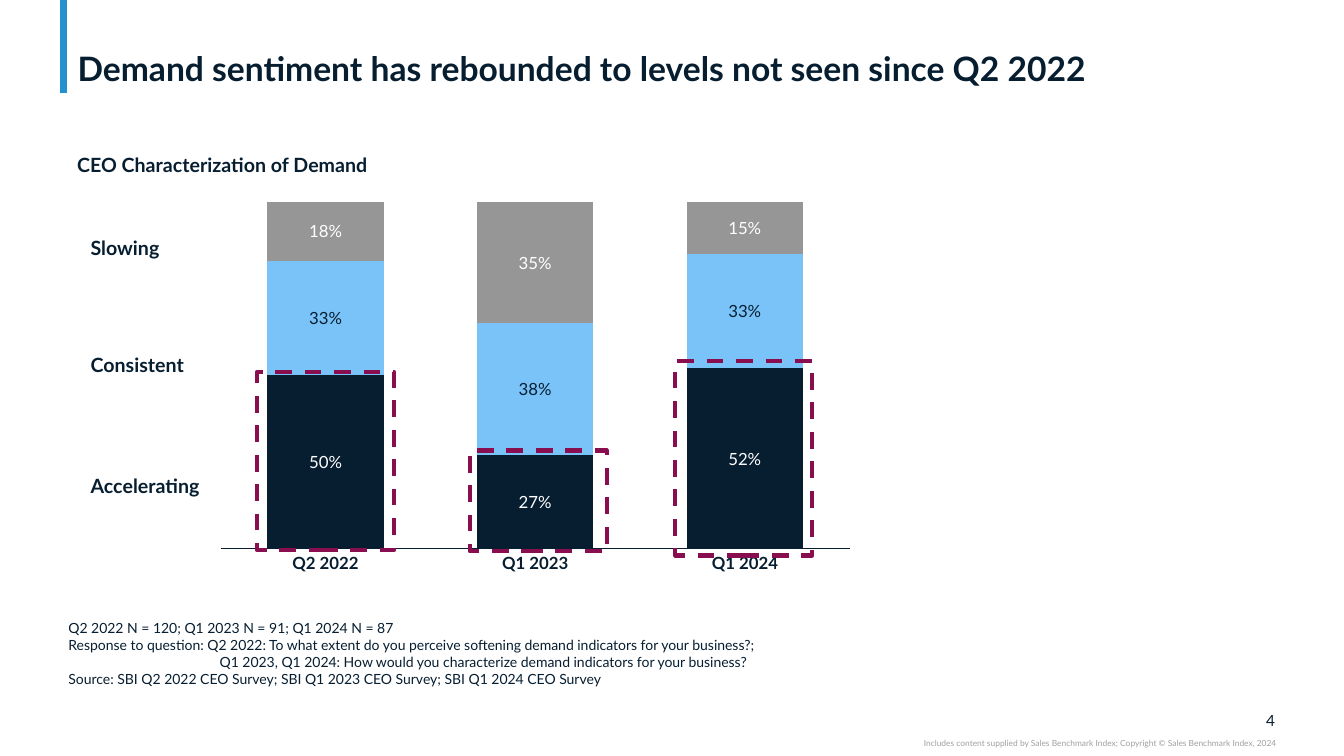
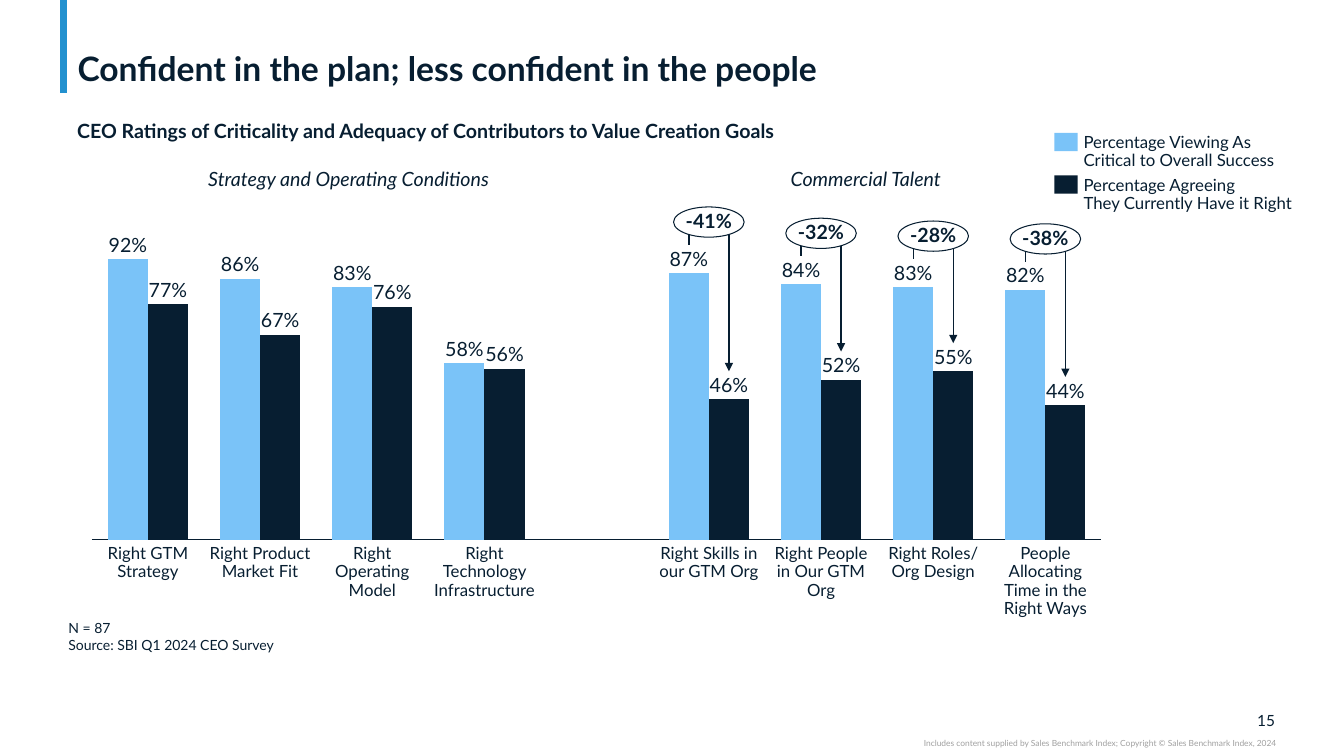
from lxml.etree import SubElement
from pptx import Presentation
from pptx.chart.data import CategoryChartData
from pptx.dml.color import RGBColor
from pptx.enum.chart import XL_CHART_TYPE, XL_TICK_LABEL_POSITION, XL_TICK_MARK
from pptx.enum.dml import MSO_LINE
from pptx.enum.shapes import MSO_CONNECTOR, MSO_SHAPE
from pptx.enum.text import MSO_ANCHOR, MSO_AUTO_SIZE, PP_ALIGN
from pptx.oxml.ns import qn
from pptx.shapes.connector import Connector
from pptx.util import Pt

FONT = "Lato"
HEX = {"navy": "071E31", "sky": "7AC3F8", "gray": "969696", "accent": "2391CF",
       "berry": "880E4F", "credit": "A0A0A0", "white": "FFFFFF"}
COLORS = {name: RGBColor.from_string(value) for name, value in HEX.items()}
LEFT, CENTER, RIGHT = PP_ALIGN.LEFT, PP_ALIGN.CENTER, PP_ALIGN.RIGHT


def add_text(page, left, top, width, height, text, size, color="navy", bold=False,
             italic=False, align=LEFT, anchor=MSO_ANCHOR.TOP, spacing=0.9,
             padded=False, oval=False):
    """Add a text box, or an outlined oval, with one paragraph per line of text."""
    place = Pt(left), Pt(top), Pt(width), Pt(height)
    if oval:
        box = page.shapes.add_shape(MSO_SHAPE.OVAL, *place)
        box.shadow.inherit = False
        box.fill.solid()
        box.fill.fore_color.rgb = COLORS["white"]
        box.line.color.rgb = COLORS["navy"]
        box.line.width = Pt(0.75)
    else:
        box = page.shapes.add_textbox(*place)
    frame = box.text_frame
    frame.word_wrap = not oval
    frame.vertical_anchor = anchor
    frame.margin_left = frame.margin_right = Pt(7.2 if padded else 0)
    frame.margin_top = frame.margin_bottom = Pt(3.6 if padded else 0)
    for index, line in enumerate(text.split("\n")):
        para = frame.add_paragraph() if index else frame.paragraphs[0]
        if line.startswith("\t"):
            tabs = SubElement(para._p.get_or_add_pPr(), qn("a:tabLst"))
            SubElement(tabs, qn("a:tab"), pos=str(Pt(108)), algn="l")
        para.alignment = align
        para.line_spacing = spacing
        span = para.add_run()
        span.text = line
        span.font.name = FONT
        span.font.size = Pt(size)
        span.font.bold = bold
        span.font.italic = italic
        span.font.color.rgb = COLORS[color]


def add_columns(page, kind, place, plot_box, series_list, overlap):
    """Add a bare column chart; series_list holds (values, fill colour) pairs."""
    data = CategoryChartData()
    data.categories = [str(n + 1) for n in range(len(series_list[0][0]))]
    for number, (values, _) in enumerate(series_list, 1):
        data.add_series(f"Series {number}", values)
    chart = page.shapes.add_chart(kind, *map(Pt, place), data).chart
    chart.has_legend = chart.has_title = False
    chart.font.name = FONT
    chart.font.size = Pt(10)
    chart.font.color.rgb = COLORS["navy"]
    axis = chart.category_axis
    axis.tick_label_position = XL_TICK_LABEL_POSITION.NONE
    axis.major_tick_mark = axis.minor_tick_mark = XL_TICK_MARK.NONE
    axis.format.line.color.rgb = COLORS["navy"]
    axis.format.line.width = Pt(0.75)
    scale = chart.value_axis
    scale.visible = scale.has_major_gridlines = False
    scale.minimum_scale, scale.maximum_scale = 0, 100
    plot = chart.plots[0]
    plot.vary_by_categories = False
    plot.gap_width, plot.overlap = 80, overlap
    for series, (_, color) in zip(plot.series, series_list):
        series.format.fill.solid()
        series.format.fill.fore_color.rgb = COLORS[color]
    # Fixed inner plot area
    area = chart._chartSpace.chart.plotArea
    for old in area.findall(qn("c:layout")):
        area.remove(old)
    layout = area.makeelement(qn("c:layout"), {})
    area.insert(0, layout)
    manual = SubElement(layout, qn("c:manualLayout"))
    settings = [("layoutTarget", "inner"), ("xMode", "edge"), ("yMode", "edge"),
                *zip("xywh", plot_box)]
    for tag, value in settings:
        SubElement(manual, qn(f"c:{tag}"), val=str(value))
    return plot


deck = Presentation()
deck.slide_width, deck.slide_height = Pt(960), Pt(540)

# Shared frame: accent line, title, subtitle, notes, page number, copyright
pages = []
for number, title, subtitle, subtitle_top, notes in [
    (4, "Demand sentiment has rebounded to levels not seen since Q2 2022",
     "CEO Characterization of Demand", 105.8,
     "Q2 2022 N = 120; Q1 2023 N = 91; Q1 2024 N = 87\n"
     "Response to question: Q2 2022: To what extent do you perceive softening demand "
     "indicators for your business?;\n"
     "\tQ1 2023, Q1 2024: How would you characterize demand indicators for your business?\n"
     "Source: SBI Q2 2022 CEO Survey; SBI Q1 2023 CEO Survey; SBI Q1 2024 CEO Survey"),
    (15, "Confident in the plan; less confident in the people",
     "CEO Ratings of Criticality and Adequacy of Contributors to Value Creation Goals", 81.4,
     "N = 87\nSource: SBI Q1 2024 CEO Survey"),
]:
    page = deck.slides.add_slide(deck.slide_layouts[5])
    pages.append(page)
    accent = page.shapes.add_connector(MSO_CONNECTOR.STRAIGHT, Pt(45.4), 0, Pt(45.4), Pt(66.2))
    accent.line.color.rgb = COLORS["accent"]
    accent.line.width = Pt(5)
    heading = page.shapes.title
    heading.left, heading.top, heading.width, heading.height = map(Pt, (48.2, 2.9, 863.3, 60.5))
    frame = heading.text_frame
    frame.auto_size = MSO_AUTO_SIZE.NONE
    frame.word_wrap = True
    frame.vertical_anchor = MSO_ANCHOR.BOTTOM
    frame.margin_top = frame.margin_bottom = 0
    para = frame.paragraphs[0]
    para.alignment = LEFT
    para.line_spacing = 0.9
    span = para.add_run()
    span.text = title
    span.font.name = FONT
    span.font.size = Pt(24)
    span.font.bold = True
    span.font.color.rgb = COLORS["navy"]
    add_text(page, 48, subtitle_top, 562, 24.5, subtitle, 14, bold=True, spacing=1, padded=True)
    add_text(page, 41.8, 439.2, 726, 67, notes, 10, spacing=1, padded=True)
    add_text(page, 886.8, 507.6, 24, 13.6, str(number), 11, align=RIGHT,
             anchor=MSO_ANCHOR.MIDDLE, spacing=1)
    add_text(page, 540, 527, 371.5, 7.2, "Includes content supplied by Sales Benchmark Index; "
             "Copyright © Sales Benchmark Index, 2024", 6, "credit", align=RIGHT, spacing=1)
demand, talent = pages

# Demand: stacked columns with value labels
plot = add_columns(demand, XL_CHART_TYPE.COLUMN_STACKED, (151.2, 123.1, 462.2, 290.2),
                   (0.014, 0.072, 0.972, 0.855),
                   [((50, 27, 52), "navy"), ((33, 38, 33), "sky"), ((18, 35, 15), "gray")], 100)
for series, color in zip(plot.series, ("white", "navy", "white")):
    labels = series.data_labels
    labels.show_value = True
    labels.number_format = '0"%"'
    labels.number_format_is_linked = False
    labels.font.name = FONT
    labels.font.size = Pt(12)
    labels.font.color.rgb = COLORS[color]

# Demand: quarter names, answer names and dashed highlights
for index, quarter in enumerate(("Q2 2022", "Q1 2023", "Q1 2024")):
    add_text(demand, 205.9 + 149.8 * index, 396.7, 53.3, 13, quarter, 12, bold=True, align=CENTER)
for top, answer in ((164.9, "Slowing"), (248.4, "Consistent"), (334.8, "Accelerating")):
    add_text(demand, 57.6, top, 114.5, 24.5, answer, 14, bold=True, spacing=1, padded=True)
for left, top, height in ((183.6, 265.7, 127.4), (335.5, 321.8, 72), (482.4, 257.8, 139)):
    highlight = demand.shapes.add_shape(MSO_SHAPE.RECTANGLE, Pt(left), Pt(top), Pt(97.9), Pt(height))
    highlight.shadow.inherit = False
    highlight.fill.background()
    highlight.line.color.rgb = COLORS["berry"]
    highlight.line.width = Pt(3)
    highlight.line.dash_style = MSO_LINE.DASH

# Talent: paired columns; the empty slot separates the two groups
critical = (100, 93, 90, 63, None, 95, 91, 90, 89)
adequate = (84, 73, 83, 61, None, 50, 57, 60, 48)
add_columns(talent, XL_CHART_TYPE.COLUMN_CLUSTERED, (59, 178.6, 734.4, 213.8),
            (0.009, 0.03, 0.982, 0.939), [(critical, "sky"), (adequate, "navy")], 0)

# Talent: slot, name, name width, shown percentages
FIRST_CENTER, PITCH, HALF_PAIR = 105.7, 80.13, 14.3
PLOT_TOP, PLOT_HEIGHT = 185, 200.8
for slot, name, width, high, low in [
    (0, "Right GTM Strategy", 59, 92, 77),
    (1, "Right Product Market Fit", 75, 86, 67),
    (2, "Right Operating Model", 58, 83, 76),
    (3, "Right Technology Infrastructure", 74, 58, 56),
    (5, "Right Skills in our GTM Org", 74, 87, 46),
    (6, "Right People in Our GTM Org", 70.5, 84, 52),
    (7, "Right Roles/ Org Design", 67, 83, 55),
    (8, "People Allocating Time in the Right Ways", 62, 82, 44),
]:
    center = FIRST_CENTER + PITCH * slot
    add_text(talent, center - width / 2, 389.5, width, 52, name, 12, align=CENTER)
    bars = [(center - HALF_PAIR, critical[slot], high), (center + HALF_PAIR, adequate[slot], low)]
    label_tops = []
    for middle, value, shown in bars:
        top = PLOT_TOP + PLOT_HEIGHT * (1 - value / 100) - 17
        label_tops.append(top)
        add_text(talent, middle - 16, top, 32, 15.1, f"{shown}%", 14, align=CENTER,
                 anchor=MSO_ANCHOR.BOTTOM)
    if slot < 5:
        continue
    # Drop from the critical to the adequate share
    oval_top = label_tops[0] - 30.2
    for (middle, _, _), label_top in zip(bars, label_tops):
        drop = talent.shapes.add_connector(MSO_CONNECTOR.STRAIGHT, Pt(middle), Pt(oval_top + 10.8),
                                           Pt(middle), Pt(label_top - 3.2))
        drop.line.color.rgb = COLORS["navy"]
        drop.line.width = Pt(1)
    SubElement(drop.line._get_or_add_ln(), qn("a:tailEnd"), type="triangle")
    add_text(talent, center - 25.2, oval_top, 50.4, 21.6, f"-{high - low}%", 14, bold=True,
             align=CENTER, anchor=MSO_ANCHOR.MIDDLE, oval=True)

# Talent: legend and group names
for top, color, text in [
    (95, "sky", "Percentage Viewing As\nCritical to Overall Success"),
    (125.3, "navy", "Percentage Agreeing\nThey Currently Have it Right"),
]:
    swatch = talent.shapes.add_shape(MSO_SHAPE.RECTANGLE, Pt(753.1), Pt(top), Pt(16.6), Pt(13))
    swatch.shadow.inherit = False
    swatch.fill.solid()
    swatch.fill.fore_color.rgb = COLORS[color]
    swatch.line.fill.background()
    add_text(talent, 774, top + 0.7, 165, 26, text, 12, anchor=MSO_ANCHOR.MIDDLE)
for left, group in ((119.5, "Strategy and Operating Conditions"), (488.9, "Commercial Talent")):
    add_text(talent, left, 115.9, 259.2, 24.5, group, 14, italic=True, align=CENTER,
             spacing=1, padded=True)

# Connectors carry no shadow
for page in pages:
    for shape in page.shapes:
        if isinstance(shape, Connector):
            SubElement(shape._element.spPr, qn("a:effectLst"))

deck.save("out.pptx")
